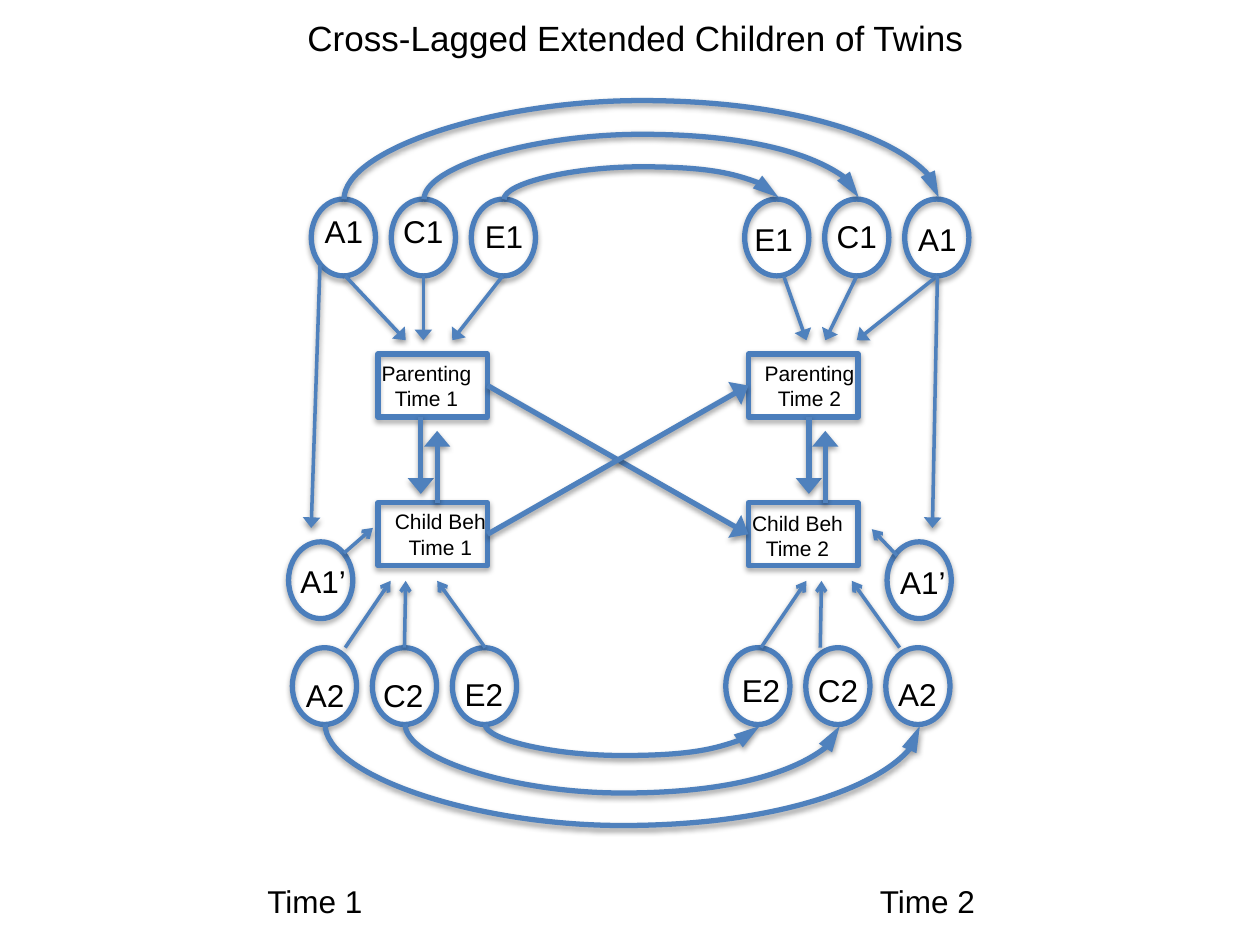
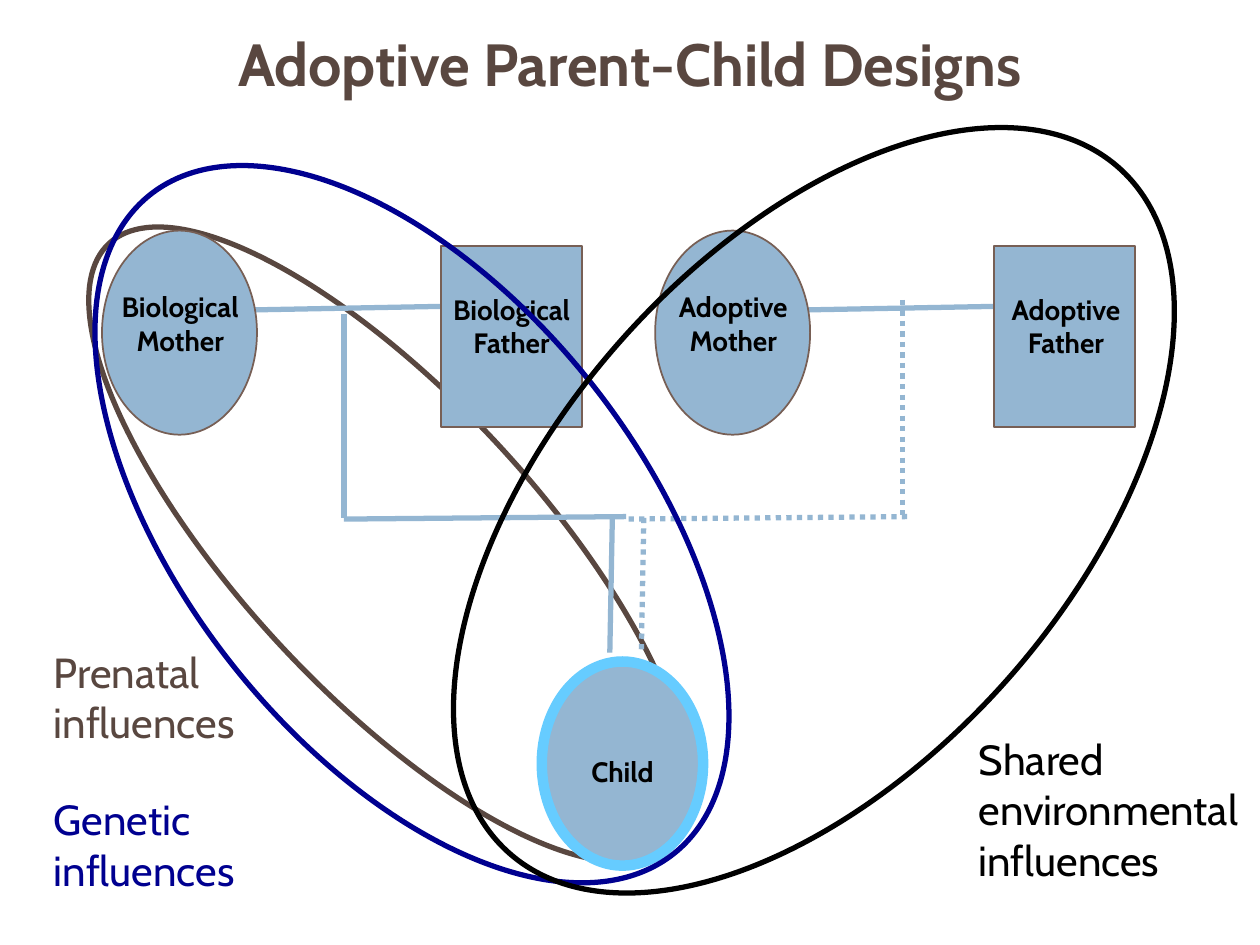
from lxml.etree import SubElement
from pptx import Presentation
from pptx.dml.color import RGBColor
from pptx.enum.dml import MSO_LINE
from pptx.enum.shapes import MSO_CONNECTOR, MSO_SHAPE
from pptx.enum.text import MSO_ANCHOR, MSO_AUTO_SIZE, PP_ALIGN
from pptx.oxml.ns import qn
from pptx.util import Inches, Pt

# Grid of the slide: 10 columns by 7.5 rows
COLUMNS, ROWS = 10, 7.5
BLACK, WHITE = "000000", "FFFFFF"
OUTLINE, ARROW = "4B7EBC", "4F81BD"
BROWN, EDGE, SKY, NAVY, GLOW = "594740", "775F55", "94B6D2", "000090", "66CCFF"

# Arrowheads: wide on straight paths, long on arcs, open on short paths
WIDE = {"type": "triangle", "w": "lg", "len": "med"}
LONG = {"type": "triangle", "w": "med", "len": "lg"}
OPEN = {"type": "arrow"}


def color(hex_text):
    return RGBColor.from_string(hex_text)


class Diagram:
    """Style and current slide, one method for each kind of element."""

    def __init__(self, deck, font, shadowed=False):
        self.shapes = deck.slides.add_slide(deck.slide_layouts[6]).shapes
        self.font, self.shadowed = font, shadowed
        self.column, self.row = deck.slide_width / COLUMNS, deck.slide_height / ROWS

    def place(self, x, y):
        return round(x * self.column), round(y * self.row)

    def shade(self, item, opacity, distance):
        """Give an item the soft shadow of its slide, or none."""
        properties = item._element.spPr
        effects = properties.find(qn("a:effectLst"))
        if effects is None:
            effects = SubElement(properties, qn("a:effectLst"))
        if self.shadowed:
            shadow = SubElement(effects, qn("a:outerShdw"), blurRad="40000",
                                dist=str(distance), dir="5400000", rotWithShape="0")
            tint = SubElement(shadow, qn("a:srgbClr"), val=BLACK)
            SubElement(tint, qn("a:alpha"), val=str(opacity * 1000))

    def outline(self, kind, box, line, width=3, fill=None, turn=0):
        item = self.shapes.add_shape(kind, *self.place(*box[:2]), *self.place(*box[2:]))
        item.rotation = turn
        item.shadow.inherit = False
        if fill:
            item.fill.solid()
            item.fill.fore_color.rgb = color(fill)
        else:
            item.fill.background()
        item.line.color.rgb = color(line)
        item.line.width = Pt(width)
        self.shade(item, 35, 23000)
        return item

    def ellipse(self, *args, **style):
        return self.outline(MSO_SHAPE.OVAL, *args, **style)

    def rectangle(self, *args, **style):
        return self.outline(MSO_SHAPE.RECTANGLE, *args, **style)

    def text(self, words, box, size, ink=BLACK, bold=False, align=PP_ALIGN.CENTER,
             wrap=True, anchor=MSO_ANCHOR.TOP, grow=True):
        frame = self.shapes.add_textbox(*self.place(*box[:2]), *self.place(*box[2:])).text_frame
        frame.word_wrap = wrap
        frame.vertical_anchor = anchor
        frame.auto_size = MSO_AUTO_SIZE.SHAPE_TO_FIT_TEXT if grow else MSO_AUTO_SIZE.NONE
        frame.text = words
        for paragraph in frame.paragraphs:
            paragraph.alignment = align
            paragraph.font.name = self.font
            paragraph.font.size = Pt(size)
            paragraph.font.bold = bold
            paragraph.font.color.rgb = color(ink)

    def connector(self, kind, start, end, ink, width, head=None, dotted=False):
        item = self.shapes.add_connector(kind, *self.place(*start), *self.place(*end))
        item.line.color.rgb = color(ink)
        item.line.width = Pt(width)
        if dotted:
            item.line.dash_style = MSO_LINE.ROUND_DOT
        if head:
            SubElement(item.line._get_or_add_ln(), qn("a:tailEnd"), **head)
        self.shade(item, 38, 20000)
        return item

    def line(self, start, end, ink=ARROW, width=2, head=None, dotted=False):
        return self.connector(MSO_CONNECTOR.STRAIGHT, start, end, ink, width, head, dotted)

    def arc(self, left, right, level, depth, above):
        """Curved arrow from left to right that bows above or below its level."""
        middle, half = (left + right) / 2, (right - left) / 2
        rise = 1 / 72
        tilt = half if above else -half
        item = self.connector(MSO_CONNECTOR.CURVE, (middle + rise / 2, level + tilt),
                              (middle - rise / 2, level - tilt), ARROW, 3, LONG)
        properties = item._element.spPr
        properties.find(qn("a:xfrm")).set("rot", str((90 if above else 270) * 60000))
        guides = properties.find(qn("a:prstGeom")).find(qn("a:avLst"))
        SubElement(guides, qn("a:gd"), name="adj1", fmla=f"val {round(depth / rise * 100000)}")


def cross_lagged(deck):
    slide = Diagram(deck, "Arial", shadowed=True)
    slide.text("Cross-Lagged Extended Children of Twins", (1.83, 0.08, 6.43, 0.44), 20)
    for words, left in (("Time 1", 1.12), ("Time 2", 5.98)):
        slide.text(words, (left, 6.95, 2.76, 0.4), 18)

    # Measured variables
    parenting_1, child_1, parenting_2, child_2 = [
        slide.rectangle((left, top, 0.87, 0.5), OUTLINE)
        for left in (3, 5.94) for top in (2.81, 3.99)]
    for words, left, top, width in (
            ("Parenting Time 1", 2.92, 2.81, 0.93), ("Child Beh Time 1", 2.99, 3.99, 1.01),
            ("Parenting Time 2", 5.94, 2.81, 0.97), ("Child Beh Time 2", 5.83, 4, 1)):
        slide.text(words, (left, top, width, 0.5), 12)

    # Latent factors: rows of up to three, each label with its own place
    pitch = 0.635
    for left, top, label_width, labels in (
            (2.47, 1.58, 0.52, (("A1", 2.47, 1.63), ("C1", 3.1, 1.63), ("E1", 3.74, 1.67))),
            (5.91, 1.58, 0.52, (("E1", 5.88, 1.7), ("C1", 6.54, 1.67), ("A1", 7.18, 1.7))),
            (2.32, 5.14, 0.52, (("A2", 2.32, 5.32), ("C2", 2.94, 5.32), ("E2", 3.58, 5.31))),
            (5.76, 5.14, 0.52, (("E2", 5.78, 5.28), ("C2", 6.39, 5.28), ("A2", 7.02, 5.31))),
            (2.29, 4.3, 0.61, (("A1’", 2.26, 4.41),)),
            (7.04, 4.3, 0.61, (("A1’", 7.02, 4.42),))):
        for place, (label, label_left, label_top) in enumerate(labels):
            slide.ellipse((left + place * pitch, top, 0.51, 0.61), OUTLINE)
            slide.text(label, (label_left, label_top, label_width, 0.4), 18, wrap=False)

    # Cross-lagged paths
    for source, target, start, end in ((parenting_1, child_2, 3.06, 4.24),
                                       (child_1, parenting_2, 4.24, 3.06)):
        path = slide.line((3.87, start), (5.94, end), width=3, head=WIDE)
        path.begin_connect(source, 3)
        path.end_connect(target, 1)

    # Paths between parenting and child behaviour
    for down, up in ((3.34, 3.47), (6.42, 6.55)):
        slide.line((down, 3.31), (down, 3.92), width=3, head=WIDE)
        slide.line((up, 3.99), (up, 3.42), width=3, head=WIDE)

    # Paths from the upper factors to parenting
    for start, end in ((2.74, 3.22), (3.36, 3.36), (3.99, 3.59),
                       (6.22, 6.4), (6.8, 6.55), (7.44, 6.8)):
        slide.line((start, 2.19), (end, 2.7), head=WIDE)

    # Paths from the lower factors to child behaviour
    for start, end in ((2.74, 3.1), (3.21, 3.22), (3.85, 3.47),
                       (6.04, 6.4), (6.51, 6.52), (7.14, 6.76)):
        slide.line((start, 5.14), (end, 4.61), head=OPEN)

    # Paths through A1’
    slide.line((2.54, 2.1), (2.47, 4.19), head=WIDE)
    slide.line((7.44, 2.19), (7.4, 4.19), head=WIDE)
    slide.line((2.73, 4.39), (2.96, 4.19), head=OPEN)
    slide.line((7.12, 4.41), (6.92, 4.2), head=OPEN)

    # Arcs between the same factors at both times
    for place, (high, low) in enumerate(((0.79, 0.81), (0.52, 0.55), (0.26, 0.25))):
        inset = place * pitch
        slide.arc(2.73 + inset, 7.45 - inset, 1.575, high, above=True)
        slide.arc(2.58 + inset, 7.3 - inset, 5.755, low, above=False)


def adoptive(deck):
    slide = Diagram(deck, "Cabin")

    # Prenatal influences lie behind the family
    slide.ellipse((1.91, 1.06, 2.35, 6.52), BROWN, fill=WHITE, turn=317.1)

    # Family lines, dotted on the adoptive side
    for start, end, dotted in (
            ((5.11, 4.11), (5.09, 5.18), True), ((4.86, 4.11), (4.84, 5.18), False),
            ((4.97, 4.1), (2.73, 4.12), False), ((7.2, 4.1), (4.97, 4.12), True),
            ((2.73, 2.49), (2.73, 4.11), False), ((7.16, 2.38), (7.16, 4.11), True)):
        slide.line(start, end, SKY, 3, dotted=dotted)

    # Child
    slide.ellipse((4.3, 5.25, 1.28, 1.62), GLOW, 6, SKY)
    slide.text("Child", (4.1, 5.94, 1.68, 0.37), 16, bold=True)

    # Couples: mother, father and the line that joins them
    for kind, left, father_label in (("Biological", 0.81, 3.22), ("Adoptive", 5.2, 7.62)):
        slide.line((left + 1.18, 2.46), (left + 2.78, 2.43), SKY, 3)
        slide.ellipse((left, 1.83, 1.23, 1.62), EDGE, 1, SKY)
        slide.rectangle((left + 2.69, 1.95, 1.12, 1.44), EDGE, 1, SKY)
        slide.text(f"{kind}\nMother", (left - 0.22, 2.25, 1.68, 0.63), 16, bold=True)
        slide.text(f"{kind}\nFather", (father_label, 2.27, 1.68, 0.63), 16, bold=True)

    # Genetic and shared environmental influences lie in front
    slide.ellipse((-0.07, 2.35, 6.68, 3.62), NAVY, turn=231.5)
    slide.ellipse((2.82, 2.01, 7.28, 4.08), BLACK, turn=311.7)
    for words, box, ink in (
            ("Prenatal\ninfluences", (0.33, 5.08, 1.83, 0.91), BROWN),
            ("Genetic influences", (0.33, 6.25, 2.17, 0.91), NAVY),
            ("Shared environmental influences", (7.67, 5.77, 2.58, 1.31), BLACK)):
        slide.text(words, box, 24, ink, align=PP_ALIGN.LEFT)

    slide.text("Adoptive Parent-Child Designs", (0, 0, COLUMNS, 1), 34, BROWN, bold=True,
               anchor=MSO_ANCHOR.MIDDLE, grow=False)


def main():
    deck = Presentation()
    deck.slide_width, deck.slide_height = Inches(10), Inches(7.5)
    cross_lagged(deck)
    adoptive(deck)
    deck.save("out.pptx")


if __name__ == "__main__":
    main()
